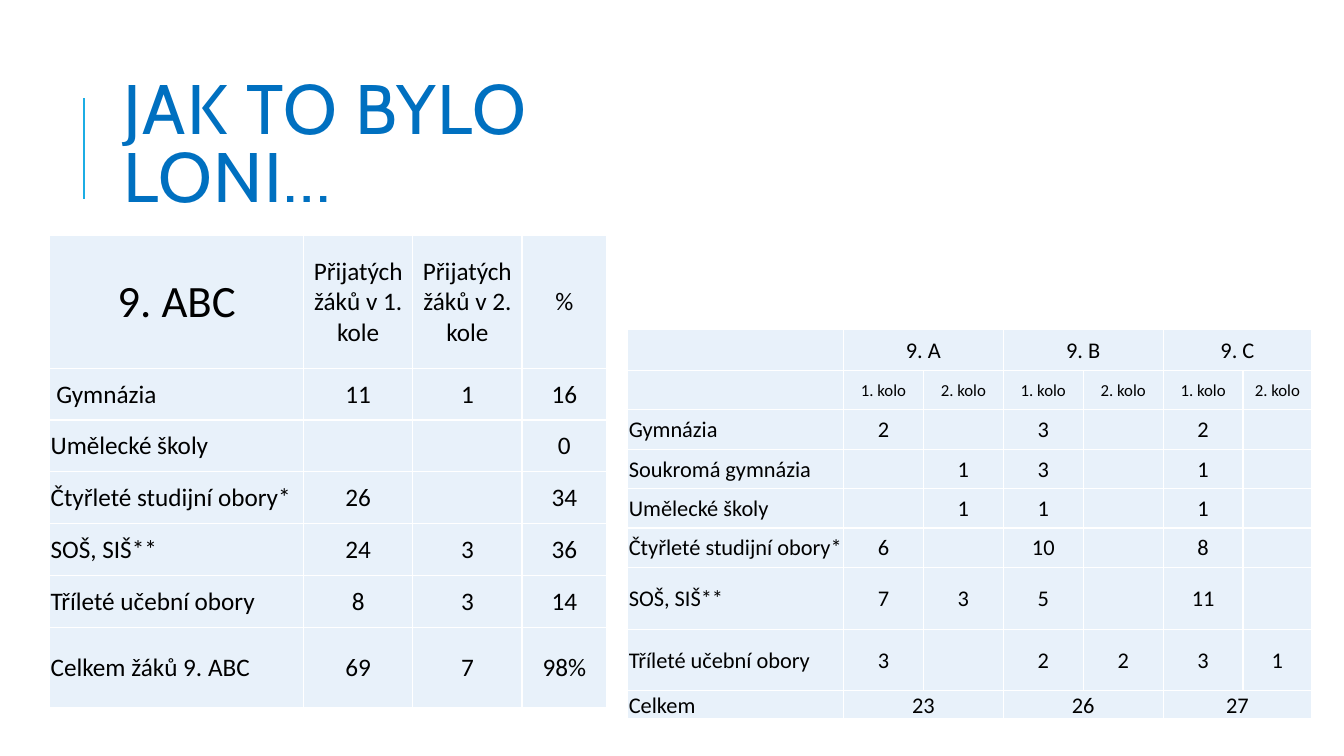
from lxml import etree
from pptx import Presentation
from pptx.dml.color import RGBColor
from pptx.enum.shapes import MSO_CONNECTOR
from pptx.enum.text import MSO_ANCHOR, MSO_AUTO_SIZE, PP_ALIGN
from pptx.oxml.ns import qn
from pptx.util import Pt

STRAIGHT = MSO_CONNECTOR.STRAIGHT
MIDDLE = MSO_ANCHOR.MIDDLE
NO_FIT = MSO_AUTO_SIZE.NONE
LEFT, CENTER = PP_ALIGN.LEFT, PP_ALIGN.CENTER

TOTALS = [
    ["9. ABC", "Přijatých žáků v 1. kole", "Přijatých žáků v 2. kole", "%"],
    [" Gymnázia", "11", "1", "16"],
    ["Umělecké školy", "", "", "0"],
    ["Čtyřleté studijní obory*", "26", "", "34"],
    ["SOŠ, SIŠ**", "24", "3", "36"],
    ["Tříleté učební obory", "8", "3", "14"],
    ["Celkem žáků 9. ABC", "69", "7", "98%"],
]
CLASSES = [
    ["", "9. A", "", "9. B", "", "9. C", ""],
    [""] + ["1. kolo", "2. kolo"] * 3,
    ["Gymnázia", "2", "", "3", "", "2", ""],
    ["Soukromá gymnázia", "", "1", "3", "", "1", ""],
    ["Umělecké školy", "", "1", "1", "", "1", ""],
    ["Čtyřleté studijní obory*", "6", "", "10", "", "8", ""],
    ["SOŠ, SIŠ**", "7", "3", "5", "", "11", ""],
    ["Tříleté učební obory", "3", "", "2", "2", "3", "1"],
    ["Celkem", "23", "", "26", "", "27", ""],
]


def color(code):
    return RGBColor.from_string(code)


def add_text(para, text, font, size, code):
    run = para.add_run()
    run.text = text
    run.font.name = font
    run.font.size = Pt(size)
    run.font.color.rgb = color(code)
    return run


def add_title(slide, left, top, width, height):
    """Place the heading and the thin rule to its left."""
    title = slide.shapes.title
    title.left, title.top = Pt(left), Pt(top)
    title.width, title.height = Pt(width), Pt(height)
    frame = title.text_frame
    frame.word_wrap = True
    frame.auto_size = NO_FIT
    frame.vertical_anchor = MIDDLE
    para = frame.paragraphs[0]
    para.alignment = LEFT
    para.line_spacing = 0.8
    run = add_text(para, "JAK TO BYLO LONI…", "Cabin", 50, "0070C0")
    run.font._element.set("spc", "100")

    x, mid = left - 21, top + height / 2
    rule = slide.shapes.add_connector(
        STRAIGHT, Pt(x), Pt(mid + 36), Pt(x), Pt(mid - 36))
    rule.line.color.rgb = color("1CADE4")
    rule.line.width = Pt(1.5)
    etree.SubElement(rule._element.spPr, qn("a:effectLst"))


def add_borders(cell):
    """Draw white lines on all sides; call before the fill is set."""
    props = cell._tc.get_or_add_tcPr()
    for side in ("lnL", "lnR", "lnT", "lnB"):
        line = etree.SubElement(props, qn("a:" + side), w=str(Pt(1)))
        fill = etree.SubElement(line, qn("a:solidFill"))
        etree.SubElement(fill, qn("a:srgbClr"), val="FFFFFF")


def add_grid(slide, left, top, cols, rows, data, size, sizes, spans=()):
    """Fill a table; sizes holds font sizes by cell, spans the row numbers
    whose cells join in pairs after the first column."""
    grid = slide.shapes.add_table(
        len(rows), len(cols), Pt(left), Pt(top),
        Pt(sum(cols)), Pt(sum(rows))).table
    for col, width in zip(grid.columns, cols):
        col.width = Pt(width)
    for row, height in zip(grid.rows, rows):
        row.height = Pt(height)
    for r, texts in enumerate(data):
        for c, text in enumerate(texts):
            cell = grid.cell(r, c)
            cell.margin_left = cell.margin_right = cell.margin_top = Pt(0.7)
            cell.margin_bottom = Pt(0)
            cell.vertical_anchor = MIDDLE
            add_borders(cell)
            cell.fill.solid()
            cell.fill.fore_color.rgb = color("E8F1FA")
            if text:
                para = cell.text_frame.paragraphs[0]
                para.alignment = CENTER if c or r == 0 else LEFT
                add_text(para, text, "Calibri", sizes.get((r, c), size),
                         "000000")
    for r in spans:
        for c in range(1, len(cols), 2):
            grid.cell(r, c).merge(grid.cell(r, c + 1))


def main():
    deck = Presentation()
    deck.slide_width, deck.slide_height = Pt(960), Pt(540)
    slide = deck.slides.add_slide(deck.slide_layouts[5])
    add_title(slide, 81, 37.5, 345.6, 136.8)
    add_grid(slide, 35.5, 168, [181.4, 78, 78, 60.5],
             [95] + [37] * 5 + [57.5], TOTALS, 18, {(0, 0): 32})
    add_grid(slide, 448.5, 235.5, [154] + [57.1] * 5 + [49],
             [29] + [28.2] * 5 + [44] * 2 + [20], CLASSES, 16,
             {(1, c): 12 for c in range(1, 7)}, spans=(0, 8))
    deck.save("out.pptx")


if __name__ == "__main__":
    main()
